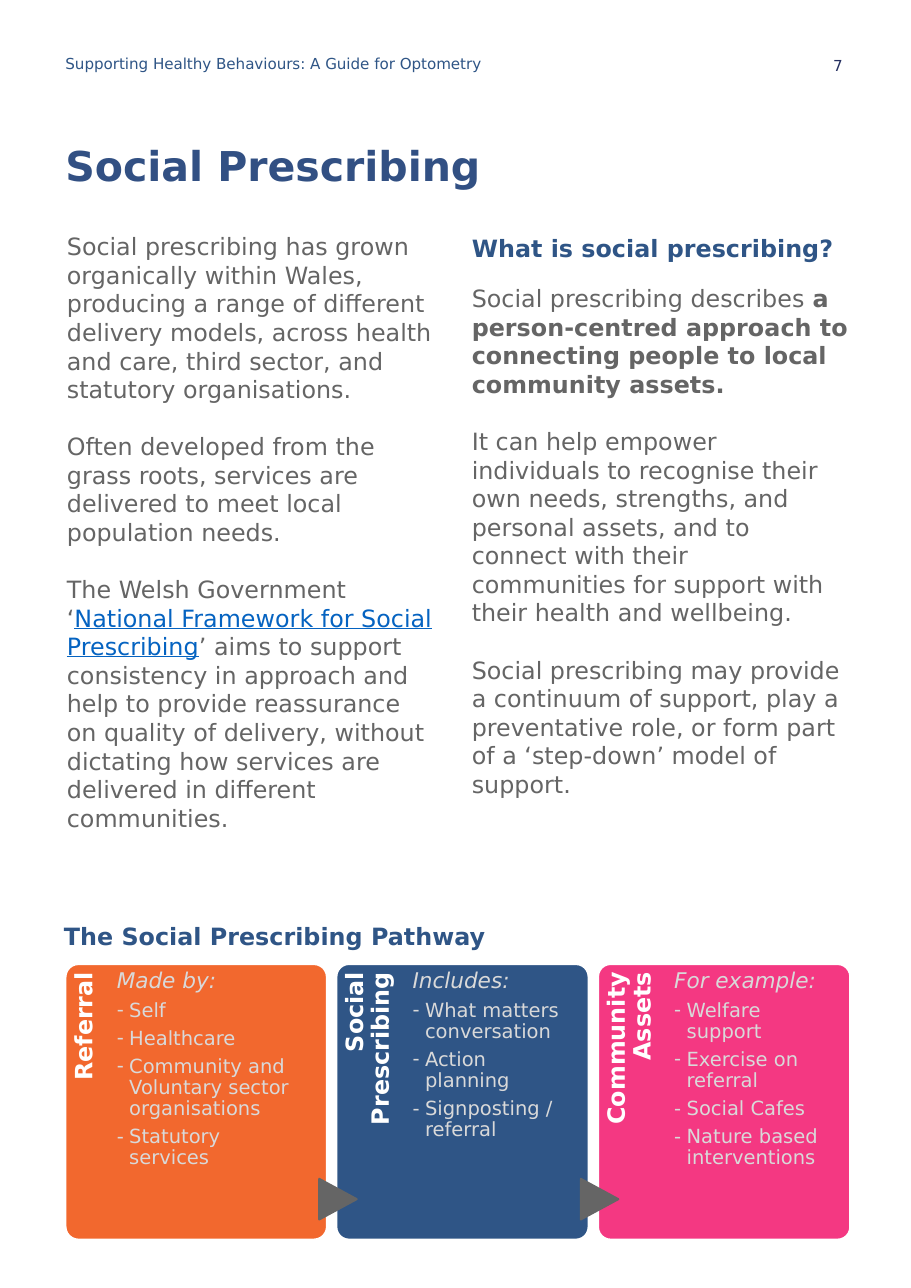
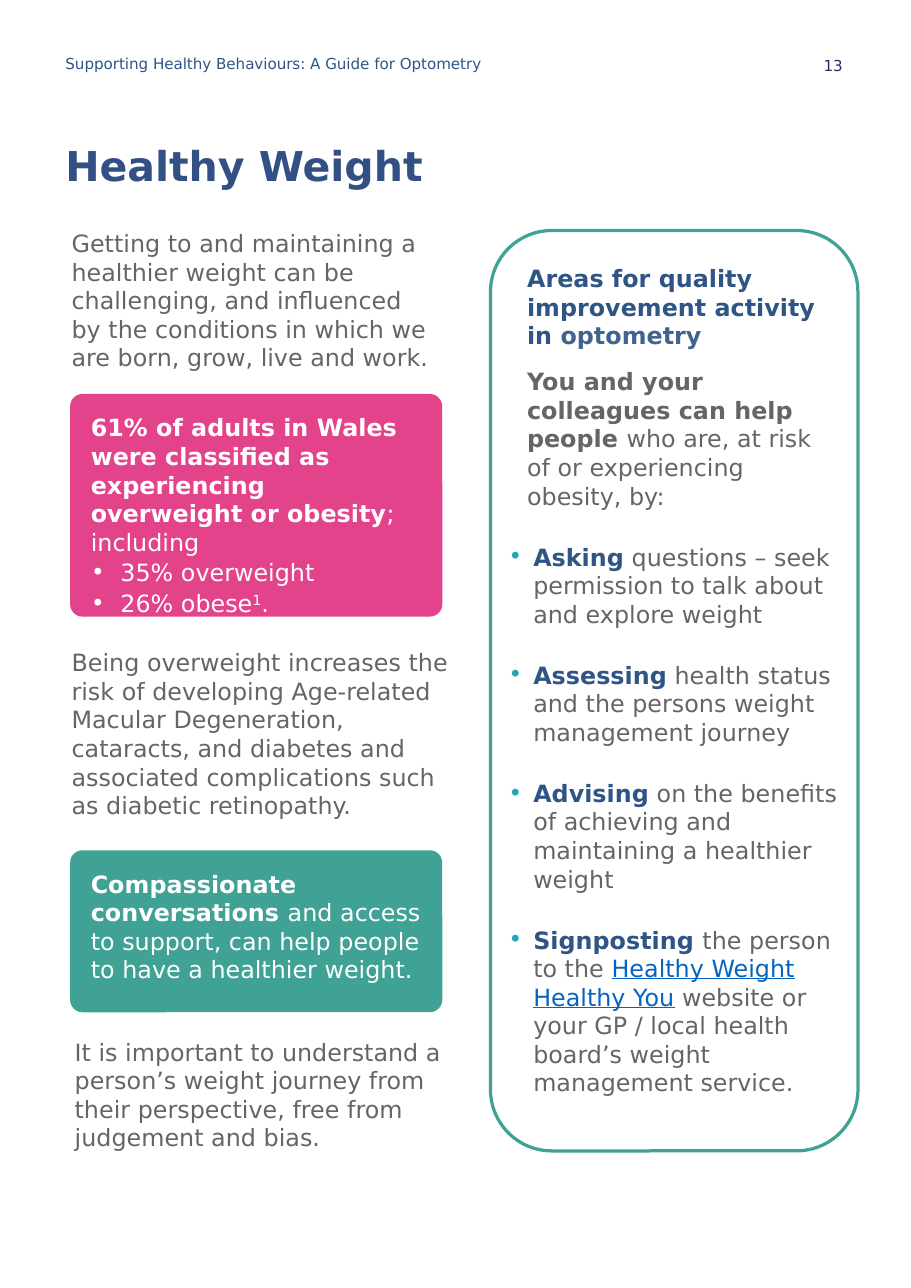
from dataclasses import dataclass

from lxml.etree import SubElement
from pptx import Presentation
from pptx.dml.color import RGBColor
from pptx.enum.shapes import MSO_SHAPE
from pptx.enum.text import MSO_ANCHOR, MSO_AUTO_SIZE, PP_ALIGN
from pptx.oxml.ns import qn
from pptx.util import Inches, Pt

FONT = "DejaVu Sans"
COLORS = {
    "title": "325083", "navy": "2F5586", "number": "242F60", "body": "656565",
    "link": "0563C1", "white": "FFFFFF", "pale": "D9D9D9", "orange": "F2682E",
    "pink": "F43882", "rose": "E3438A", "green": "40A294", "bullet": "23A7B5",
    "soft navy": "406390",
}
# name: (size, colour, further font settings)
STYLES = {
    "header": (7, "navy", {}),
    "number": (7, "number", {}),
    "title": (19, "title", {"bold": True}),
    "heading": (11, "navy", {"bold": True}),
    "soft heading": (11, "soft navy", {"bold": True}),
    "body": (11, "body", {}),
    "strong": (11, "body", {"bold": True}),
    "link": (11, "link", {"underline": True}),
    "white": (11, "white", {}),
    "white strong": (11, "white", {"bold": True}),
    "card lead": (10, "pale", {"italic": True}),
    "card item": (9, "pale", {}),
}
LINE = 13.2          # points in one blank line of body text
PANEL_GAP = 15       # points between the paragraphs of the panel
CARD_GAP = 3.2       # points between the items of a pathway card
LEFT = 0.42


@dataclass
class Para:
    spans: list
    before: float = 0
    after: float = 0
    spacing: float = 1
    indent: float = 0
    bullet: str = ""
    bullet_color: str = ""
    align: PP_ALIGN = PP_ALIGN.LEFT


def plain(text, style="body", **options):
    return Para([(text, style)], **options)


def panel_point(*spans):
    return Para(list(spans), before=PANEL_GAP, indent=0.16, bullet="•", bullet_color="bullet")


HEADER = "Supporting Healthy Behaviours: A Guide for Optometry"

PRESCRIBING_LEFT = [
    plain("Social prescribing has grown organically within Wales, producing a range of "
          "different delivery models, across health and care, third sector, and statutory "
          "organisations."),
    plain("Often developed from the grass roots, services are delivered to meet local "
          "population needs.", before=LINE),
    Para([("The Welsh Government ‘", "body"),
          ("National Framework for Social Prescribing", "link"),
          ("’ aims to support consistency in approach and help to provide reassurance on "
           "quality of delivery, without dictating how services are delivered in different "
           "communities.", "body")], before=LINE),
]
PRESCRIBING_RIGHT = [
    plain("What is social prescribing?", "heading"),
    Para([("Social prescribing describes ", "body"),
          ("a person-centred approach to connecting people to local community assets.",
           "strong")], before=10),
    plain("It can help empower individuals to recognise their own needs, strengths, and "
          "personal assets, and to connect with their communities for support with their "
          "health and wellbeing.", before=LINE),
    plain("Social prescribing may provide a continuum of support, play a preventative role, "
          "or form part of a ‘step-down’ model of support.", before=LINE),
]
PATHWAY_TITLE = "The Social Prescribing Pathway"
# label, colour, card width, offset of the list, lead, items
PATHWAY = [
    ("Referral", "orange", 1.68, 0.33, "Made by:",
     ["Self", "Healthcare", "Community and\nVoluntary sector\norganisations",
      "Statutory\nservices"]),
    ("Social Prescribing", "navy", 1.62, 0.49, "Includes:",
     ["What matters\nconversation", "Action\nplanning", "Signposting /\nreferral"]),
    ("Community Assets", "pink", 1.62, 0.49, "For example:",
     ["Welfare\nsupport", "Exercise on\nreferral", "Social Cafes",
      "Nature based\ninterventions"]),
]

# left, top, width, height, text
WEIGHT_TEXTS = [
    (0.46, 1.45, 2.32, 0.94,
     "Getting to and maintaining a healthier weight can be challenging, and influenced by "
     "the conditions in which we are born, grow, live and work."),
    (0.46, 4.14, 2.48, 1.12,
     "Being overweight increases the risk of developing Age-related Macular Degeneration, "
     "cataracts, and diabetes and associated complications such as diabetic retinopathy."),
    (0.48, 6.64, 2.53, 0.75,
     "It is important to understand a person’s weight journey from their perspective, free "
     "from judgement and bias."),
]
# top, height, colour, right inset, paragraphs
WEIGHT_CARDS = [
    (2.53, 1.43, "rose", 0.19, [
        Para([("61% of adults in Wales were classified as experiencing overweight or obesity",
               "white strong"), ("; including", "white")]),
        plain("35% overweight", "white", before=1, indent=0.19, bullet="•"),
        Para([("26% obese", "white"), ("1", "white", "superscript"), (".", "white")],
             before=1, indent=0.19, bullet="•")]),
    (5.46, 1.04, "green", 0.08, [
        Para([("Compassionate conversations ", "white strong"),
              ("and access to support, can help people to have a healthier weight.",
               "white")])]),
]
PANEL = [
    Para([("Areas for quality improvement activity in ", "heading"),
          ("optometry", "soft heading")], indent=0.12),
    Para([("You and your colleagues can help people ", "strong"),
          ("who are, at risk of or experiencing obesity, by:", "body")],
         before=8, indent=0.12),
    panel_point(("Asking", "heading"),
                (" questions – seek permission to talk about and explore weight", "body")),
    panel_point(("Assessing", "heading"),
                (" health status and the persons weight management journey", "body")),
    panel_point(("Advising", "heading"),
                (" on the benefits of achieving and maintaining a healthier weight", "body")),
    panel_point(("Signposting ", "heading"), ("the person to the ", "body"),
                ("Healthy Weight Healthy You", "link"),
                (" website or your GP / local health board’s weight management service.",
                 "body")),
]


def rgb(name):
    return RGBColor.from_string(COLORS[name])


def add_span(paragraph, text, style, position=""):
    size, color, settings = STYLES[style]
    for index, line in enumerate(text.split("\n")):
        if index:
            paragraph.add_line_break()
        span = paragraph.add_run()
        span.text = line
        span.font.name = FONT
        span.font.size = Pt(size)
        span.font.color.rgb = rgb(color)
        span.font.bold = settings.get("bold", False)
        span.font.italic = settings.get("italic", False)
        span.font.underline = settings.get("underline", False)
        if position == "superscript":
            span._r.get_or_add_rPr().set("baseline", "30000")


def set_indent(paragraph, item):
    """Indent the whole paragraph, or hang its bullet in the indent."""
    properties = paragraph._p.get_or_add_pPr()
    width = Inches(item.indent)
    properties.set("marL", str(width))
    properties.set("indent", str(-width if item.bullet else 0))
    if item.bullet:
        if item.bullet_color:
            holder = SubElement(properties, qn("a:buClr"))
            SubElement(holder, qn("a:srgbClr")).set("val", COLORS[item.bullet_color])
        SubElement(properties, qn("a:buFont")).set("typeface", FONT)
        SubElement(properties, qn("a:buChar")).set("char", item.bullet)


def write(shape, paragraphs, insets=(0, 0, 0, 0), anchor=MSO_ANCHOR.TOP):
    """Fill a shape with paragraphs; insets run left, top, right, bottom."""
    frame = shape.text_frame
    frame.word_wrap = True
    frame.auto_size = MSO_AUTO_SIZE.NONE
    frame.vertical_anchor = anchor
    (frame.margin_left, frame.margin_top,
     frame.margin_right, frame.margin_bottom) = map(Inches, insets)
    for index, item in enumerate(paragraphs):
        paragraph = frame.add_paragraph() if index else frame.paragraphs[0]
        set_indent(paragraph, item)
        paragraph.alignment = item.align
        paragraph.line_spacing = item.spacing
        paragraph.space_before = Pt(item.before)
        paragraph.space_after = Pt(item.after)
        for span in item.spans:
            add_span(paragraph, *span)


def add_text(page, place, paragraphs, insets=(0, 0.09, 0, 0), anchor=MSO_ANCHOR.TOP):
    box = page.shapes.add_textbox(*map(Inches, place))
    write(box, paragraphs, insets, anchor)
    return box


def add_block(page, kind, place, fill=None, line=None, line_width=1):
    block = page.shapes.add_shape(kind, *map(Inches, place))
    block.shadow.inherit = False
    if fill:
        block.fill.solid()
        block.fill.fore_color.rgb = rgb(fill)
    else:
        block.fill.background()
    if line:
        block.line.color.rgb = rgb(line)
        block.line.width = Pt(line_width)
    else:
        block.line.fill.background()
    return block


def add_page(deck, title, number):
    page = deck.slides.add_slide(deck.slide_layouts[5])
    heading = page.shapes.title
    heading.left, heading.top, heading.width, heading.height = map(
        Inches, (LEFT, 0.89, 4.89, 0.33))
    write(heading, [plain(title, "title")], anchor=MSO_ANCHOR.BOTTOM)
    add_text(page, (4.19, 0.2, 1.32, 0.44),
             [plain(str(number), "number", align=PP_ALIGN.RIGHT)],
             (0.1, 0.05, 0.1, 0.05), MSO_ANCHOR.MIDDLE)
    return page


def add_header_to_layout(page):
    header = add_text(page, (LEFT, 0.33, 2.88, 0.14), [plain(HEADER, "header")],
                      (0, 0.02, 0, 0))
    page.slide_layout.shapes.element.append(header.element)


def add_pathway(page):
    top, height, gap = 6.19, 1.77, 0.06
    label_length, label_width = 1.45, 0.33
    left = LEFT
    for index, (label, color, width, offset, lead, items) in enumerate(PATHWAY):
        card = add_block(page, MSO_SHAPE.ROUNDED_RECTANGLE, (left, top, width, height),
                         color, "white")
        card.adjustments[0] = 0.05
        turned = add_text(
            page,
            (left + (label_width - label_length) / 2,
             top + (label_length - label_width) / 2, label_length, label_width),
            [plain(label, "white strong", spacing=0.9, align=PP_ALIGN.RIGHT)],
            (0, 0.04, 0.05, 0))
        turned.rotation = 270
        entries = [plain(lead, "card lead", spacing=0.9, after=CARD_GAP)]
        entries += [plain(item, "card item", spacing=0.9, after=CARD_GAP,
                          indent=0.08, bullet="-") for item in items]
        add_text(page, (left + offset, top, width - offset, height), entries,
                 (0, 0.04, 0, 0))
        if index:
            arrow = add_block(page, MSO_SHAPE.FLOWCHART_EXTRACT,
                              (left - 0.12, 7.58, 0.26, 0.24), "body", "body")
            arrow.rotation = 90
        left += width + gap


def build_prescribing(deck):
    page = add_page(deck, "Social Prescribing", 7)
    add_header_to_layout(page)
    add_text(page, (0.43, 1.4, 2.37, 4.17), PRESCRIBING_LEFT)
    add_text(page, (3.03, 1.41, 2.43, 3.94), PRESCRIBING_RIGHT)
    add_text(page, (0.41, 5.83, 2.91, 0.28), [plain(PATHWAY_TITLE, "heading")])
    add_pathway(page)


def build_weight(deck):
    page = add_page(deck, "Healthy Weight", 13)
    for top, height, color, right_inset, paragraphs in WEIGHT_CARDS:
        card = add_block(page, MSO_SHAPE.ROUNDED_RECTANGLE, (0.45, top, 2.39, height), color)
        card.adjustments[0] = 0.08 / height
        write(card, paragraphs, (0.11, 0.1, right_inset, 0))
    for *place, text in WEIGHT_TEXTS:
        add_text(page, place, [plain(text)], (0, 0.02, 0, 0))
    panel = add_block(page, MSO_SHAPE.ROUNDED_RECTANGLE, (3.15, 1.48, 2.36, 5.91),
                      line="green", line_width=1.5)
    write(panel, PANEL, (0, 0.1, 0, 0))


def main():
    deck = Presentation()
    deck.slide_width, deck.slide_height = Inches(5.85), Inches(8.27)
    build_prescribing(deck)
    build_weight(deck)
    deck.save("out.pptx")


if __name__ == "__main__":
    main()
